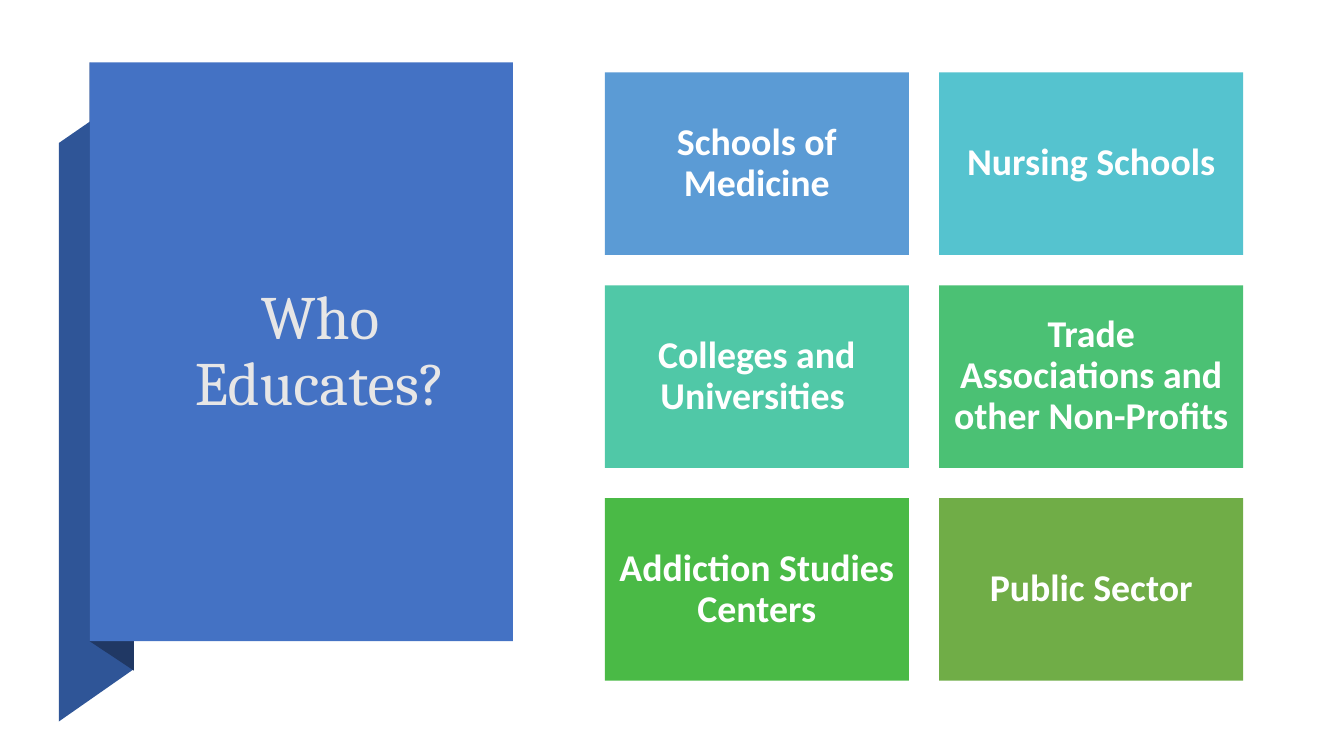
from pptx import Presentation
from pptx.dml.color import RGBColor
from pptx.enum.shapes import MSO_SHAPE as SHAPE
from pptx.enum.text import MSO_ANCHOR as ANCHOR, PP_ALIGN as ALIGN
from pptx.util import Pt

TOPICS = [
    ("Schools of Medicine", "5B9BD5"),
    ("Nursing Schools", "55C3CF"),
    ("Colleges and Universities ", "50C8A7"),
    ("Trade Associations and other Non-Profits", "4BC174"),
    ("Addiction Studies Centers", "4ABA46"),
    ("Public Sector", "70AD47"),
]


def rgb(value):
    """Turn a hex string into a colour."""
    return RGBColor.from_string(value)


def paint(sp, color):
    """Give a shape a flat fill without line or shadow."""
    sp.shadow.inherit = False
    sp.fill.solid()
    sp.fill.fore_color.rgb = rgb(color)
    sp.line.fill.background()


def add_rect(s, x, y, w, h, color):
    """Add a flat rectangle, measured in points."""
    sp = s.shapes.add_shape(SHAPE.RECTANGLE, Pt(x), Pt(y), Pt(w), Pt(h))
    paint(sp, color)
    return sp


def add_polygon(s, points, color):
    """Add a flat closed outline through points."""
    start, *rest = [(Pt(x), Pt(y)) for x, y in points]
    builder = s.shapes.build_freeform(*start)
    builder.add_line_segments(rest, close=True)
    paint(builder.convert_to_shape(), color)


def write(tf, text, size, font, color, bold=False, inset=7.2):
    """Write one centred paragraph into a text frame."""
    tf.word_wrap = True
    tf.vertical_anchor = ANCHOR.MIDDLE
    tf.margin_left = tf.margin_right = Pt(inset)
    tf.margin_top = tf.margin_bottom = Pt(inset)
    p = tf.paragraphs[0]
    p.alignment = ALIGN.CENTER
    p.line_spacing = 0.9
    r = p.add_run()
    r.text = text
    r.font.size = Pt(size)
    r.font.name = font
    r.font.bold = bold
    r.font.color.rgb = rgb(color)


def add_title_panel(s, x, y, w, h, text):
    """Draw the folded ribbon, its front panel and the title."""
    left, right, bottom = x - 22, x + 31.6, y + h
    add_polygon(s, [(left, bottom + 57.4), (right, bottom + 20),
                    (right, y + 20.6), (left, y + 57.6)], "2F5597")
    add_polygon(s, [(x, bottom), (right, bottom + 21),
                    (right, y + 20.4), (x, y)], "203864")
    add_rect(s, x, y, w, h, "4472C4")
    title = s.shapes.title
    title.left, title.top = Pt(x + 22.4), Pt(y + 25)
    title.width, title.height = Pt(w - 18), Pt(h - 49)
    write(title.text_frame, text, 44, "Cambria", "E7E6E6")
    s.shapes.element.append(title.element)


def add_topic_grid(s, x, y, w, h, topics, cols=2, gap=21.7):
    """Lay out topic tiles in an even grid."""
    rows = -(-len(topics) // cols)
    tile_w = (w - gap * (cols - 1)) / cols
    tile_h = (h - gap * (rows - 1)) / rows
    for i, (text, color) in enumerate(topics):
        row, col = divmod(i, cols)
        sp = add_rect(s, x + col * (tile_w + gap), y + row * (tile_h + gap),
                      tile_w, tile_h, color)
        write(sp.text_frame, text, 27, "Calibri", "FFFFFF", True, 8.1)


def main():
    """Build the slide and save it."""
    prs = Presentation()
    prs.slide_width, prs.slide_height = Pt(960), Pt(540)
    s = prs.slides.add_slide(prs.slide_layouts[5])
    add_title_panel(s, 64, 44.6, 302.4, 413.4, "Who Educates?")
    add_topic_grid(s, 432, 51.8, 456, 434.4, TOPICS)
    prs.save("out.pptx")


if __name__ == "__main__":
    main()
